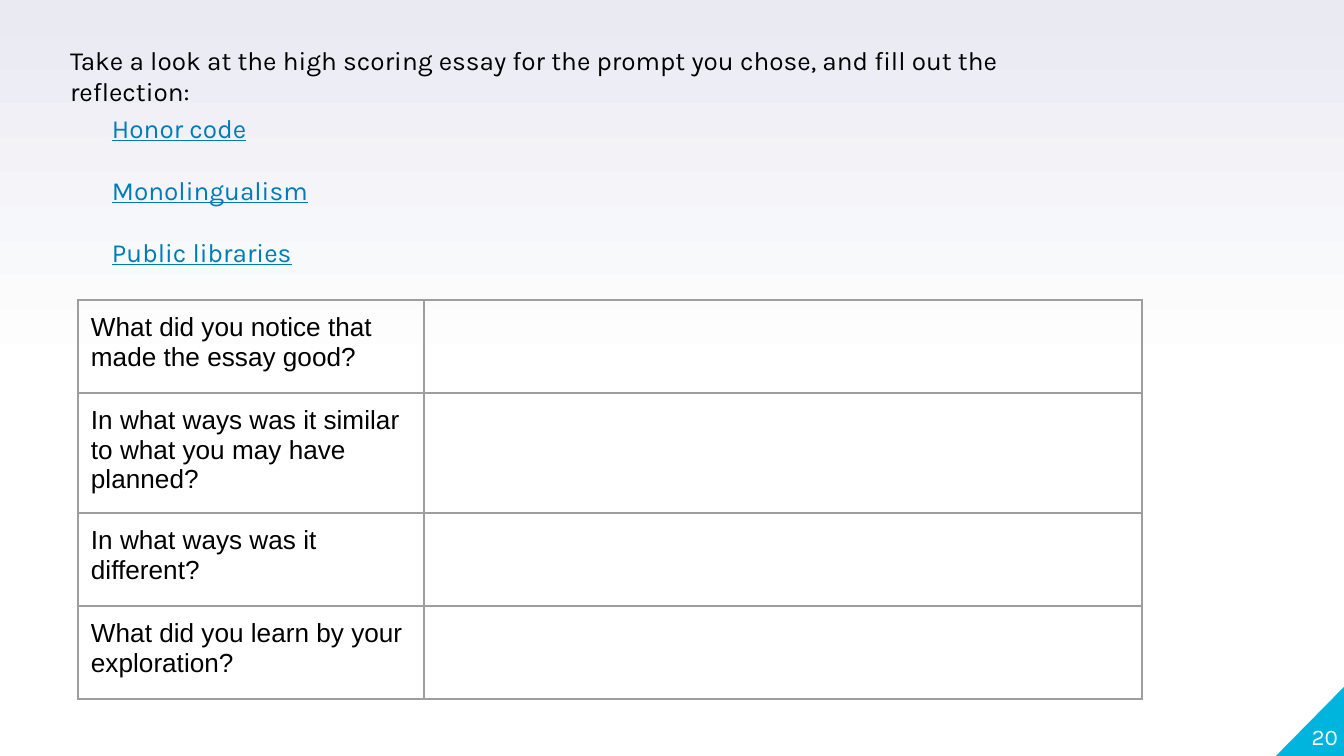
import pptx
import pptx.util
import pptx.dml.color
import pptx.enum.shapes
import pptx.enum.text
import pptx.oxml.ns
from lxml import etree

SCALE = 914400 / 134.4  # EMU in one px
COLORS = {
    "white": "FFFFFF", "haze": "E9EAF2", "corner": "00B5DD",
    "text": "000000", "link": "007BB9", "border": "9E9E9E",
}
ALIGN = pptx.enum.text.PP_ALIGN
ANCHOR = pptx.enum.text.MSO_ANCHOR


def emu(px):
    return pptx.util.Emu(round(px * SCALE))


def color(name):
    return pptx.dml.color.RGBColor.from_string(COLORS[name])


class Page:
    def __init__(self, deck):
        self.slide = deck.slides.add_slide(deck.slide_layouts[6])
        self.shapes = self.slide.shapes

    def backdrop(self, low, high):
        fill = self.slide.background.fill
        fill.gradient()
        fill.gradient_angle = 90
        for stop, name, place in zip(fill.gradient_stops, (low, high), (0.5, 1)):
            stop.color.rgb = color(name)
            stop.position = place

    def style(self, frame, name, font, size, inset, align=ALIGN.LEFT, line=False):
        frame.word_wrap = True
        frame.margin_left = frame.margin_right = emu(inset)
        frame.margin_top = frame.margin_bottom = emu(inset)
        for para in frame.paragraphs:
            para.alignment = align
            for run in para.runs:
                run.font.name = font
                run.font.size = pptx.util.Pt(size)
                run.font.color.rgb = color(name)
                run.font.underline = line

    def text(self, box, words, name, size=14, inset=13, align=ALIGN.LEFT,
             anchor=ANCHOR.TOP, line=False, gap=0):
        frame = self.shapes.add_textbox(*map(emu, box)).text_frame
        frame.text = words
        frame.vertical_anchor = anchor
        self.style(frame, name, "Karla", size, inset, align, line)
        for para in frame.paragraphs[1:]:
            para.space_before = pptx.util.Pt(gap)

    def corner(self, box, name):
        kind = pptx.enum.shapes.MSO_SHAPE.RIGHT_TRIANGLE
        shape = self.shapes.add_shape(kind, *map(emu, box))
        shape.shadow.inherit = False
        shape.fill.solid()
        shape.fill.fore_color.rgb = color(name)
        shape.line.fill.background()
        shape.element.spPr.xfrm.set("flipH", "1")

    def border(self, cell, name, width):
        props = cell._tc.get_or_add_tcPr()
        qn = pptx.oxml.ns.qn
        for spot, side in enumerate(("lnL", "lnR", "lnT", "lnB")):
            line = etree.Element(qn("a:" + side), w=str(pptx.util.Pt(width)))
            fill = etree.SubElement(line, qn("a:solidFill"))
            etree.SubElement(fill, qn("a:srgbClr"), val=COLORS[name])
            props.insert(spot, line)

    def table(self, left, top, cols, rows, labels):
        box = (left, top, sum(cols), sum(rows))
        grid = self.shapes.add_table(len(rows), len(cols), *map(emu, box)).table
        grid.first_row = grid.horz_banding = False
        for col, width in zip(grid.columns, cols):
            col.width = emu(width)
        for row, height, label in zip(grid.rows, rows, labels):
            row.height = emu(height)
            row.cells[0].text_frame.text = label
            for cell in row.cells:
                cell.fill.background()
                self.border(cell, "border", 0.75)
                cell.margin_left = cell.margin_right = emu(13)
                cell.margin_top = cell.margin_bottom = emu(13)
                for run in cell.text_frame.paragraphs[0].runs:
                    run.font.name = "Arial"
                    run.font.size = pptx.util.Pt(14)
                    run.font.color.rgb = color("text")


def main():
    deck = pptx.Presentation()
    deck.slide_width, deck.slide_height = emu(1344), emu(756)
    page = Page(deck)

    # Background and page number
    page.backdrop("white", "haze")
    page.corner((1276, 687, 68, 69), "corner")
    page.text((1271, 682, 67, 68), "20", "white", size=12, inset=0,
              align=ALIGN.RIGHT, anchor=ANCHOR.BOTTOM)

    # Task and essay list
    page.text((57, 31, 1025, 69), "Take a look at the high scoring essay for "
              "the prompt you chose, and fill out the reflection:", "text")
    page.text((99, 99, 405, 239), "Honor code\nMonolingualism\nPublic libraries",
              "link", line=True, gap=16.5)

    # Reflection table
    page.table(78, 300, (346, 718), (93, 115, 93, 93), (
        "What did you notice that made the essay good?",
        "In what ways was it similar to what you may have planned?",
        "In what ways was it different?",
        "What did you learn by your exploration?",
    ))

    deck.save("out.pptx")


if __name__ == "__main__":
    main()
